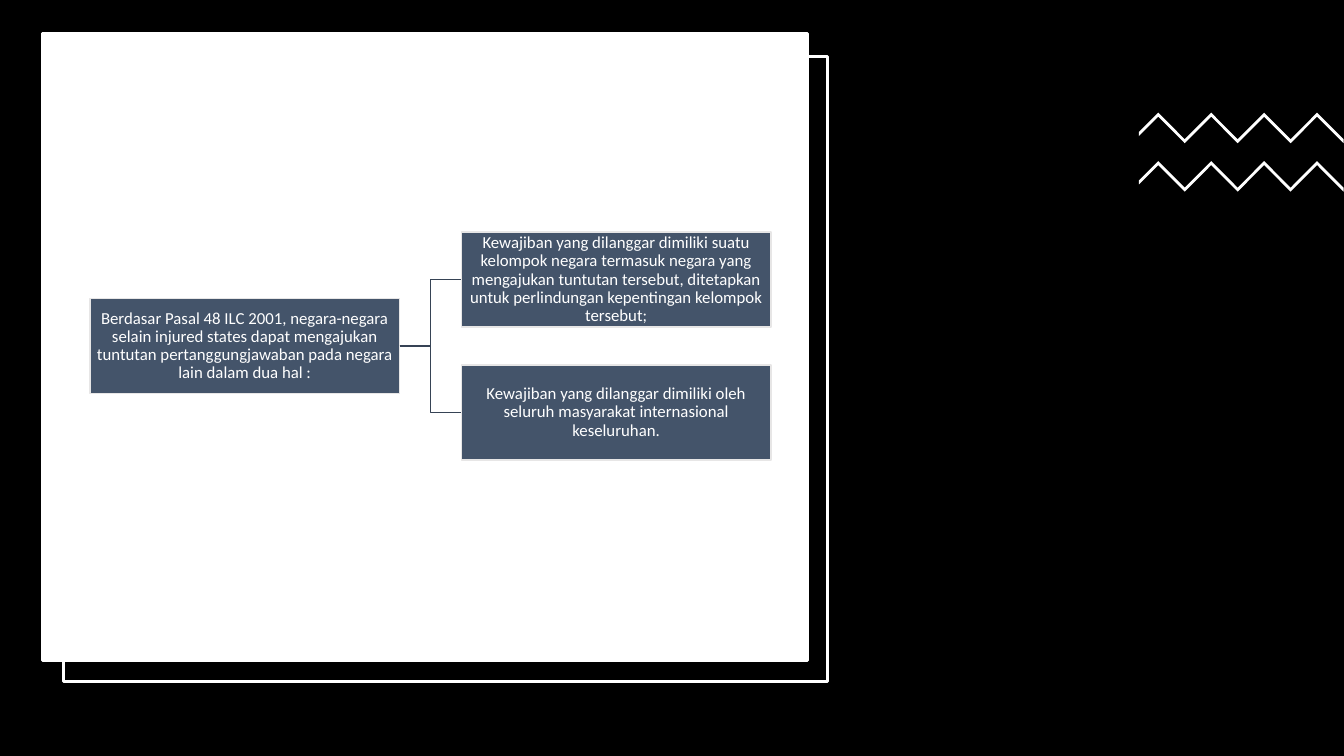
from dataclasses import dataclass

from lxml.etree import SubElement
from pptx import Presentation
from pptx.dml.color import RGBColor
from pptx.enum.shapes import MSO_CONNECTOR, MSO_SHAPE
from pptx.enum.text import MSO_ANCHOR, PP_ALIGN
from pptx.oxml.ns import qn
from pptx.util import Cm, Pt

ROOT = ("Berdasar Pasal 48 ILC 2001, negara-negara selain injured states dapat "
        "mengajukan tuntutan pertanggungjawaban pada negara lain dalam dua hal :")
BRANCHES = [
    "Kewajiban yang dilanggar dimiliki suatu kelompok negara termasuk negara yang "
    "mengajukan tuntutan tersebut, ditetapkan untuk perlindungan kepentingan "
    "kelompok tersebut;",
    "Kewajiban yang dilanggar dimiliki oleh seluruh masyarakat internasional "
    "keseluruhan.",
]


@dataclass(frozen=True)
class Theme:
    black: RGBColor = RGBColor(0x00, 0x00, 0x00)
    white: RGBColor = RGBColor(0xFF, 0xFF, 0xFF)
    box: RGBColor = RGBColor(0x44, 0x54, 0x6A)
    box_edge: RGBColor = RGBColor(0xE7, 0xE6, 0xE6)
    link: RGBColor = RGBColor(0x36, 0x43, 0x55)
    font: str = "Calibri"
    text_size: Pt = Pt(12)
    frame_width: Pt = Pt(2.25)
    thin_width: Pt = Pt(1)


THEME = Theme()

# All lengths below are centimetres.
SLIDE_W, SLIDE_H = 33.87, 19.05
FRAME = (1.6, 1.42, 19.25, 15.75)
PANEL = (1.07, 0.84, 19.28, 15.8)
BOX_W, BOX_H = 7.8, 2.39
ROOT_X, BRANCH_X = 2.27, 11.63
BRANCH_TOP, BRANCH_PITCH = 5.85, 3.35
ZIGZAG_TOPS = (2.84, 4.06)
ZIGZAG_LEFT, ZIGZAG_PEAK, ZIGZAG_RIGHT = 28.7, 29.19, 33.86
ZIGZAG_STEPS, ZIGZAG_DROP, ZIGZAG_THICK = 7, 0.67, 0.1


def add_rect(slide, bounds, fill, edge, width):
    sp = slide.shapes.add_shape(MSO_SHAPE.RECTANGLE, *map(Cm, bounds))
    sp.shadow.inherit = False
    sp.fill.solid()
    sp.fill.fore_color.rgb = fill
    sp.line.color.rgb = edge
    sp.line.width = width
    return sp


def add_box(slide, x, y, text):
    sp = add_rect(slide, (x, y, BOX_W, BOX_H), THEME.box, THEME.box_edge,
                  THEME.thin_width)
    tf = sp.text_frame
    tf.word_wrap = True
    tf.vertical_anchor = MSO_ANCHOR.MIDDLE
    tf.margin_left = tf.margin_top = tf.margin_right = tf.margin_bottom = Cm(0.03)
    tf.text = text
    p = tf.paragraphs[0]
    p.alignment = PP_ALIGN.CENTER
    p.line_spacing = 0.9
    font = p.runs[0].font
    font.name, font.size = THEME.font, THEME.text_size
    font.color.rgb = THEME.white
    return sp


def add_link(slide, parent, child):
    link = slide.shapes.add_connector(MSO_CONNECTOR.ELBOW, 0, 0, 0, 0)
    link.begin_connect(parent, 3)
    link.end_connect(child, 1)
    link.line.color.rgb = THEME.link
    link.line.width = THEME.thin_width
    SubElement(link._element.spPr, qn("a:effectLst"))


def add_zigzag(slide, top):
    """Draw a band whose lower edge is its upper edge moved down."""
    step = (ZIGZAG_RIGHT - ZIGZAG_PEAK) / ZIGZAG_STEPS
    upper = [(ZIGZAG_LEFT, top + ZIGZAG_PEAK - ZIGZAG_LEFT)]
    upper += [(ZIGZAG_PEAK + i * step, top + i % 2 * ZIGZAG_DROP)
              for i in range(ZIGZAG_STEPS + 1)]
    lower = [(x, y + ZIGZAG_THICK) for x, y in reversed(upper)]
    points = [(Cm(x), Cm(y)) for x, y in upper + lower]
    builder = slide.shapes.build_freeform(*points[0])
    builder.add_line_segments(points[1:], close=True)
    sp = builder.convert_to_shape()
    sp.shadow.inherit = False
    sp.fill.solid()
    sp.fill.fore_color.rgb = THEME.white
    sp.line.fill.background()


def main():
    prs = Presentation()
    prs.slide_width, prs.slide_height = Cm(SLIDE_W), Cm(SLIDE_H)
    slide = prs.slides.add_slide(prs.slide_layouts.get_by_name("Blank"))
    slide.background.fill.solid()
    slide.background.fill.fore_color.rgb = THEME.black

    for bounds, fill in ((FRAME, THEME.black), (PANEL, THEME.white)):
        add_rect(slide, bounds, fill, THEME.white, THEME.frame_width)
    for top in ZIGZAG_TOPS:
        add_zigzag(slide, top)

    root_y = BRANCH_TOP + BRANCH_PITCH * (len(BRANCHES) - 1) / 2
    root = add_box(slide, ROOT_X, root_y, ROOT)
    for i, text in enumerate(BRANCHES):
        branch = add_box(slide, BRANCH_X, BRANCH_TOP + i * BRANCH_PITCH, text)
        add_link(slide, root, branch)

    prs.save("out.pptx")


if __name__ == "__main__":
    main()
